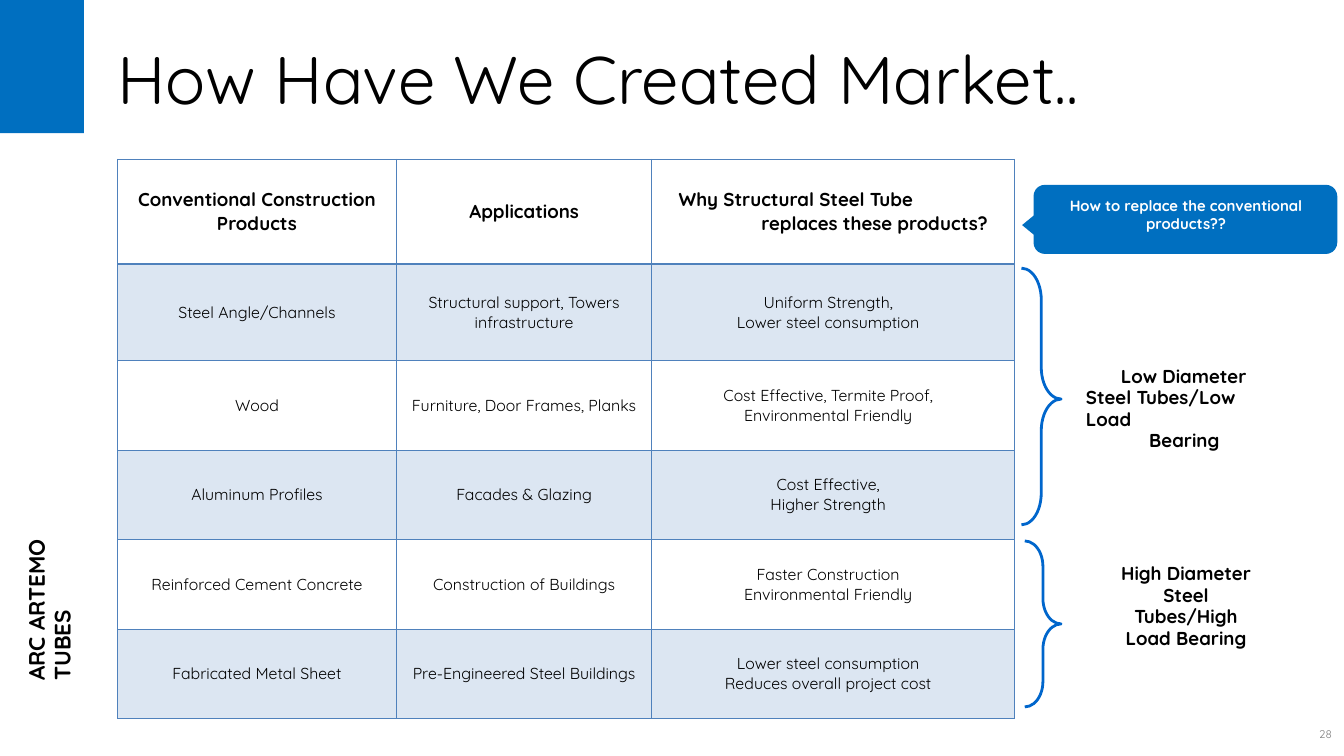
from math import cos, radians, sin

from lxml import etree
from pptx import Presentation
from pptx.dml.color import RGBColor
from pptx.enum.shapes import MSO_SHAPE
from pptx.enum.text import MSO_ANCHOR, PP_ALIGN
from pptx.oxml.ns import qn
from pptx.util import Inches, Pt

LEFT, CENTER, RIGHT = PP_ALIGN.LEFT, PP_ALIGN.CENTER, PP_ALIGN.RIGHT
MIDDLE = MSO_ANCHOR.MIDDLE
RECTANGLE, RIGHT_BRACE = MSO_SHAPE.RECTANGLE, MSO_SHAPE.RIGHT_BRACE

BLACK = RGBColor(0x00, 0x00, 0x00)
WHITE = RGBColor(0xFF, 0xFF, 0xFF)
GREY = RGBColor(0x7E, 0x7E, 0x7E)
BLUE = RGBColor(0x00, 0x6F, 0xC0)
BRACE_BLUE = RGBColor(0x00, 0x66, 0xCC)
GRID_BLUE = RGBColor(0x4F, 0x81, 0xBC)
BAND_BLUE = RGBColor(0xDC, 0xE6, 0xF2)

COLUMN_WIDTHS = [4.15, 3.8, 5.4]
ROW_HEIGHTS = [1.56, 1.44] + [1.33] * 4
ROWS = [
    ["Conventional Construction\nProducts", "Applications",
     "Why Structural Steel Tube\nreplaces these products?"],
    ["Steel Angle/Channels", "Structural support, Towers\ninfrastructure",
     "Uniform Strength,\nLower steel consumption"],
    ["Wood", "Furniture, Door Frames, Planks",
     "Cost Effective, Termite Proof,\nEnvironmental Friendly"],
    ["Aluminum Profiles", "Facades & Glazing",
     "Cost Effective,\nHigher Strength"],
    ["Reinforced Cement Concrete", "Construction of Buildings",
     "Faster Construction\nEnvironmental Friendly"],
    ["Fabricated Metal Sheet", "Pre-Engineered Steel Buildings",
     "Lower steel consumption\nReduces overall project cost"],
]


class SlideBuilder:
    """Holds the text style and the page being drawn."""

    font_name = "Quicksand"

    def __init__(self, page):
        self.page = page

    def paragraph(self, para, text, size, color=BLACK, bold=False, align=LEFT,
                  spacing=None, left=0, indent=0):
        """Fill a paragraph; left and indent are in inches."""
        if left or indent:
            properties = para._p.get_or_add_pPr()
            properties.set("marL", str(Inches(left)))
            properties.set("indent", str(Inches(indent)))
        para.text = text
        para.alignment = align
        if spacing:
            para.line_spacing = spacing
        formats = {"name": self.font_name, "size": Pt(size), "bold": bold}
        for span in para.runs:
            for key, value in formats.items():
                setattr(span.font, key, value)
            span.font.color.rgb = color

    def text(self, place, text, size, top=0.01, left=0, indents=(0,),
             vertical=None, **style):
        """Add a text box; indents has one first-line indent per paragraph."""
        box = self.page.shapes.add_textbox(*map(Inches, place))
        frame = box.text_frame
        settings = {"word_wrap": True, "margin_left": Inches(left),
                    "margin_top": Inches(top), "margin_right": 0,
                    "margin_bottom": 0}
        for key, value in settings.items():
            setattr(frame, key, value)
        if vertical:
            frame._txBody.bodyPr.set("vert", vertical)
        paragraphs = [text] if isinstance(text, str) else text
        for number, (words, indent) in enumerate(zip(paragraphs, indents)):
            para = frame.add_paragraph() if number else frame.paragraphs[0]
            self.paragraph(para, words, size, indent=indent, **style)

    def paint(self, shape, color):
        shape.shadow.inherit = False
        shape.fill.solid()
        shape.fill.fore_color.rgb = color
        shape.line.fill.background()

    def block(self, place, color):
        self.paint(self.page.shapes.add_shape(RECTANGLE, *map(Inches, place)), color)

    def brace(self, place, curl, middle):
        shape = self.page.shapes.add_shape(RIGHT_BRACE, *map(Inches, place))
        shape.adjustments[0], shape.adjustments[1] = curl, middle
        shape.shadow.inherit = False
        shape.fill.background()
        shape.line.color.rgb = BRACE_BLUE
        shape.line.width = Pt(3)

    def callout(self, left, top, right, bottom, radius, tail):
        """Draw a rounded box with a tail of three points on its left side."""
        corners = [(left + radius, bottom - radius, 90),
                   (right - radius, bottom - radius, 0),
                   (right - radius, top + radius, 270),
                   (left + radius, top + radius, 180)]
        points = list(tail)
        for x, y, start in corners:
            for step in range(6):
                angle = radians(start + 90 - 18 * step)
                points.append((x + radius * cos(angle), y + radius * sin(angle)))
        points = [(Inches(x), Inches(y)) for x, y in points]
        outline = self.page.shapes.build_freeform(*points[0])
        outline.add_line_segments(points[1:])
        self.paint(outline.convert_to_shape(), BLUE)

    def border(self, cell, side, width):
        line = etree.SubElement(cell._tc.get_or_add_tcPr(), qn("a:ln" + side),
                                w=str(Pt(width)))
        fill = etree.SubElement(line, qn("a:solidFill"))
        etree.SubElement(fill, qn("a:srgbClr"), val=str(GRID_BLUE))

    def cell(self, cell, text, row, column):
        header = row == 0
        last_column = column == len(COLUMN_WIDTHS) - 1
        settings = {"margin_left": 0, "margin_top": 0, "margin_bottom": 0,
                    "margin_right": Inches(0.15 if last_column else 0),
                    "vertical_anchor": MIDDLE}
        for key, value in settings.items():
            setattr(cell, key, value)
        widths = {"L": 1, "R": 1, "T": 2.25 if row == 1 else 1,
                  "B": 2.25 if header else 1}
        for side, width in widths.items():
            self.border(cell, side, width)
        if row % 2:
            cell.fill.solid()
            cell.fill.fore_color.rgb = BAND_BLUE
        else:
            cell.fill.background()
        style = {"size": 20 if header else 17, "bold": header, "align": CENTER}
        if header and last_column:
            style.update(align=LEFT, left=1.63, indent=-1.23)
        self.paragraph(cell.text_frame.paragraphs[0], text, **style)

    def table(self, left, top):
        place = (left, top, sum(COLUMN_WIDTHS), sum(ROW_HEIGHTS))
        table = self.page.shapes.add_table(
            len(ROWS), len(COLUMN_WIDTHS), *map(Inches, place)).table
        for column, width in zip(table.columns, COLUMN_WIDTHS):
            column.width = Inches(width)
        for row, height in zip(table.rows, ROW_HEIGHTS):
            row.height = Inches(height)
        for row, texts in enumerate(ROWS):
            for column, text in enumerate(texts):
                self.cell(table.cell(row, column), text, row, column)


def main():
    deck = Presentation()
    deck.slide_width, deck.slide_height = Inches(20), Inches(11.25)
    slide = SlideBuilder(deck.slides.add_slide(deck.slide_layouts[6]))
    label = {"bold": True, "spacing": 0.96}

    slide.text((0.36, 6.94, 0.44, 3.19), "ARC ARTEMO\nTUBES", 24, top=0.02,
               vertical="vert270", **label)
    slide.text((0.71, 0.36, 18.57, 1.42), "How Have We Created Market..", 72,
               top=0.2, left=1.04)
    slide.table(1.75, 2.37)

    slide.brace((15.2, 3.99, 0.59, 3.82), 0.8, 0.51)
    slide.brace((15.25, 8.05, 0.54, 2.47), 0.7, 0.5)
    slide.text((16.16, 5.44, 2.91, 1.03),
               ["Low Diameter\nSteel Tubes/Low\nLoad", "Bearing"], 20,
               indents=(0.52, 0.94), **label)
    slide.text((16.52, 8.38, 2.26, 1.03),
               "High Diameter\nSteel\nTubes/High\nLoad Bearing", 20,
               align=CENTER, **label)

    slide.callout(15.38, 2.75, 19.9, 3.78, 0.17,
                  [(15.38, 3.21), (15.21, 3.35), (15.38, 3.49)])
    slide.text((15.9, 2.94, 3.5, 0.56),
               "How to replace the conventional\nproducts??", 16,
               color=WHITE, align=CENTER, **label)
    slide.block((0, 0, 1.25, 1.98), BLUE)
    slide.text((19.28, 10.63, 0.54, 0.4), "28", 12, top=0.2, color=GREY,
               align=RIGHT)
    deck.save("out.pptx")


if __name__ == "__main__":
    main()
